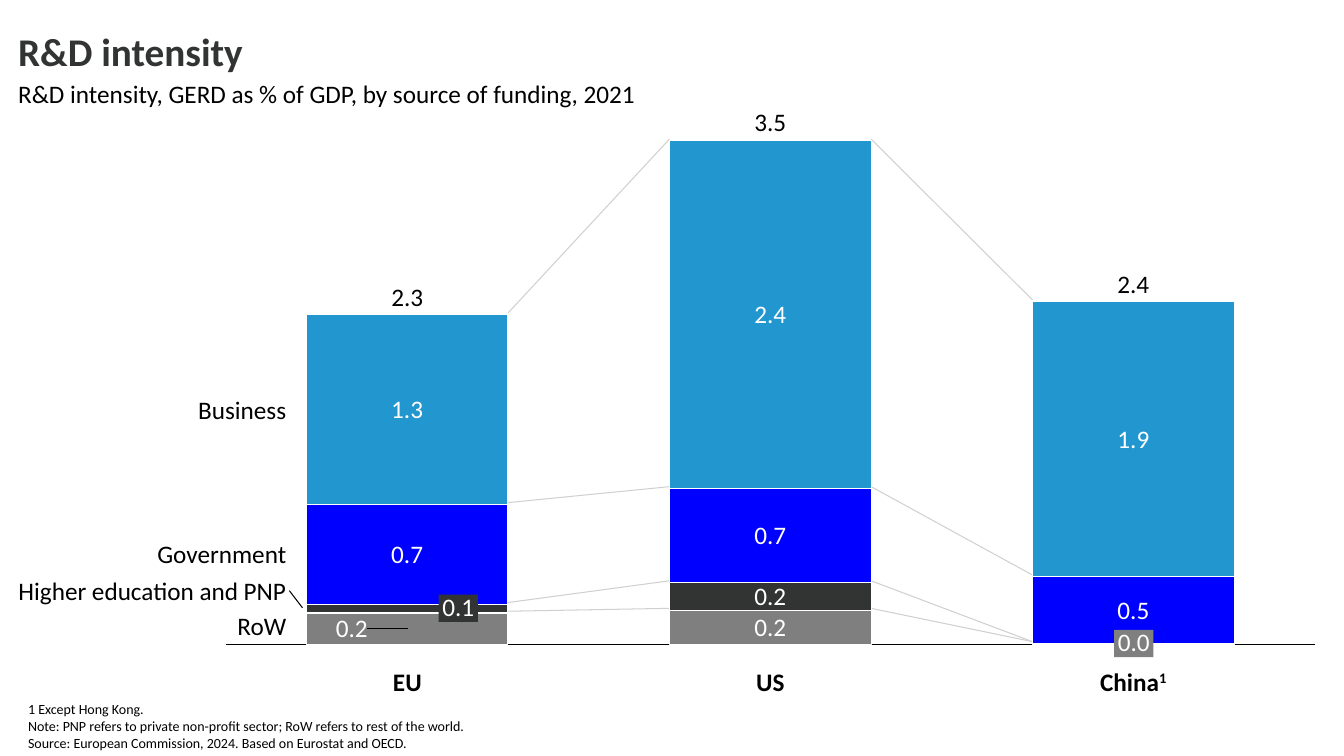
from itertools import accumulate

from lxml import etree
from pptx import Presentation
from pptx.chart import data
from pptx.dml.color import RGBColor
from pptx.enum import chart as charts, shapes, text
from pptx.oxml import ns, parse_xml
from pptx.util import Inches, Pt

BLACK = RGBColor(0x00, 0x00, 0x00)
WHITE = RGBColor(0xFF, 0xFF, 0xFF)
CHARCOAL = RGBColor(0x32, 0x33, 0x33)
GREY = RGBColor(0x7F, 0x7F, 0x7F)
PALE = RGBColor(0xD0, 0xD0, 0xD0)
BLUE = RGBColor(0x00, 0x00, 0xFF)
SKY = RGBColor(0x22, 0x96, 0xCF)
LEFT, CENTER, RIGHT = text.PP_ALIGN.LEFT, text.PP_ALIGN.CENTER, text.PP_ALIGN.RIGHT
TOP, MIDDLE, BOTTOM = text.MSO_ANCHOR.TOP, text.MSO_ANCHOR.MIDDLE, text.MSO_ANCHOR.BOTTOM


def write(box, lines, size=18, color=BLACK, bold=False, align=LEFT, anchor=TOP,
          spacing=None, wrap=False, margins=(0, 0)):
    frame = box.text_frame
    side, edge = map(Inches, margins)
    settings = {"margin_left": side, "margin_right": side, "margin_top": edge,
                "margin_bottom": edge, "word_wrap": wrap, "vertical_anchor": anchor,
                "auto_size": text.MSO_AUTO_SIZE.NONE}
    for name, value in settings.items():
        setattr(frame, name, value)
    frame.text = "\n".join(lines)
    for para in frame.paragraphs:
        para.alignment = align
        para.line_spacing = spacing
        for name, value in {"name": "Calibri", "size": Pt(size), "bold": bold}.items():
            setattr(para.font, name, value)
        para.font.color.rgb = color
    return frame


def draw_line(x1, y1, x2, y2, color):
    line = page.shapes.add_connector(
        shapes.MSO_CONNECTOR.STRAIGHT, Inches(x1), Inches(y1), Inches(x2), Inches(y2))
    line.line.color.rgb = color
    line.line.width = Pt(0.75)
    etree.SubElement(line._element.spPr, ns.qn("a:effectLst"))


deck = Presentation()
deck.slide_width, deck.slide_height = Inches(13.33), Inches(7.5)
page = deck.slides.add_slide(deck.slide_layouts[5])

title = page.shapes.title
title.left, title.top, title.width, title.height = map(Inches, (0.18, 0.32, 2.54, 0.42))
write(title, ["R&D intensity"], size=28, color=CHARCOAL, bold=True, spacing=0.9, wrap=True)

subtitle = page.shapes.add_textbox(*map(Inches, (0.18, 0.78, 10.11, 0.39)))
write(subtitle, ["R&D intensity, GERD as % of GDP, by source of funding, 2021"], wrap=True)

notes = page.shapes.add_textbox(*map(Inches, (0.18, 6.9, 11.85, 0.61)))
write(notes, ["1 Except Hong Kong.",
              "Note: PNP refers to private non-profit sector; RoW refers to rest of the world.",
              "Source: European Commission, 2024. Based on Eurostat and OECD."],
      size=10, wrap=True, margins=(0.1, 0.05))

centers = [4.04, 7.64, 11.24]
bar_width, base, plot_height, axis_max = 2, 6.38, 5, 3.48
funding = [
    ((0.22, 0.24, 0.01), GREY, GREY, (0, 1)),
    ((0.06, 0.19, 0.46), CHARCOAL, BLUE, (1, 2)),
    ((0.69, 0.65, 1.9), BLUE, SKY, (0, 1, 2)),
    ((1.31, 2.4, None), SKY, SKY, (0, 1)),
]

levels = []
for stack in zip(*[values for values, *_ in funding]):
    tops = list(accumulate(value for value in stack if value is not None))
    tops = tops[:1] * (len(funding) - len(tops)) + tops
    levels.append([base - top * plot_height / axis_max for top in tops])
for index in range(2):
    for start, end in zip(levels[index], levels[index + 1]):
        draw_line(centers[index] + bar_width / 2, start,
                  centers[index + 1] - bar_width / 2, end, PALE)

chart_data = data.CategoryChartData(number_format="0.0")
chart_data.categories = ["1", "2", "3"]
for number, (values, *_) in enumerate(funding, 1):
    chart_data.add_series(f"Series {number}", values)
chart = page.shapes.add_chart(
    charts.XL_CHART_TYPE.COLUMN_STACKED,
    *map(Inches, (2.15, 0.97, 10.98, 5.85)), chart_data).chart
chart.has_legend = chart.has_title = False
chart.font.name, chart.font.size = "Calibri", Pt(10)
chart.font.color.rgb = BLACK

category_axis, value_axis = chart.category_axis, chart.value_axis
category_axis.tick_label_position = charts.XL_TICK_LABEL_POSITION.NONE
category_axis.major_tick_mark = charts.XL_TICK_MARK.NONE
category_axis.format.line.color.rgb = BLACK
category_axis.format.line.width = Pt(0.75)
value_axis.visible = value_axis.has_major_gridlines = False
value_axis.minimum_scale, value_axis.maximum_scale = 0, axis_max

plot = chart.plots[0]
plot.gap_width, plot.overlap, plot.vary_by_categories = 80, 100, False
for series, (_, color, china_color, labelled) in zip(plot.series, funding):
    china = series.points[2]
    for part, fill in ((series, color), (china, china_color)):
        part.format.fill.solid()
        part.format.fill.fore_color.rgb = fill
        part.format.line.color.rgb = WHITE
        part.format.line.width = Pt(0.75)
    series.data_labels.show_value = False
    for point in labelled:
        font = series.points[point].data_label.font
        font.name, font.size = "Calibri", Pt(18)
        font.color.rgb = WHITE


def layout(x, y, extra=""):
    return parse_xml(
        f'<c:layout {ns.nsdecls("c")}><c:manualLayout>{extra}'
        f'<c:x val="{x}"/><c:y val="{y}"/>'
        + ('<c:w val="0.984"/><c:h val="0.855"/>' if extra else "")
        + '</c:manualLayout></c:layout>')


plot_area = chart._chartSpace.chart.plotArea
for old in plot_area.findall(ns.qn("c:layout")):
    plot_area.remove(old)
plot_area.insert(0, layout(
    0.008, 0.073, '<c:layoutTarget val="inner"/><c:xMode val="edge"/><c:yMode val="edge"/>'))
row_labels = plot.series[0].data_labels._element
row_labels.find(ns.qn("c:dLbl")).insert(1, layout(-0.05, 0))
row_labels.append(parse_xml(
    f'<c:extLst {ns.nsdecls("c")}><c:ext uri="{{CE6537A1-D6FC-4f65-9D91-7224C49458BB}}" '
    'xmlns:c15="http://schemas.microsoft.com/office/drawing/2012/chart">'
    '<c15:showLeaderLines val="1"/></c:ext></c:extLst>'))

draw_line(2.87, 5.86, 3, 6.03, BLACK)

for label, left, top, color in (("0.1", 4.35, 5.9, CHARCOAL), ("0.0", 11.05, 6.25, GREY)):
    tag = page.shapes.add_shape(
        shapes.MSO_SHAPE.RECTANGLE, *map(Inches, (left, top, 0.39, 0.27)))
    tag.shadow.inherit = False
    tag.fill.solid()
    tag.fill.fore_color.rgb = color
    tag.line.fill.background()
    write(tag, [label], color=WHITE, align=CENTER, anchor=MIDDLE, spacing=0.9,
          margins=(0.04, 0))

regions = [("EU", 0.29, "2.3", 2.82), ("US", 0.28, "3.5", 1.09), ("China", 0.65, "2.4", 2.7)]
for center, (region, width, total, top) in zip(centers, regions):
    box = page.shapes.add_textbox(*map(Inches, (center - width / 2, 6.61, width, 0.3)))
    para = write(box, [region], bold=True, align=CENTER).paragraphs[0]
    if region == "China":
        span = para.add_run()
        span.text = "1"
        span.font._element.set("baseline", "30000")
    box = page.shapes.add_textbox(*map(Inches, (center - 0.195, top, 0.39, 0.27)))
    write(box, [total], align=CENTER, anchor=BOTTOM, spacing=0.9, margins=(0.04, 0))

sources = [("Business", 0.86, 3.91), ("Government", 1.26, 5.34),
           ("Higher education and PNP", 2.63, 5.71), ("RoW", 0.48, 6.06)]
for source, width, top in sources:
    box = page.shapes.add_textbox(*map(Inches, (2.84 - width, top, width, 0.3)))
    write(box, [source], align=RIGHT, anchor=MIDDLE)

deck.save("out.pptx")
